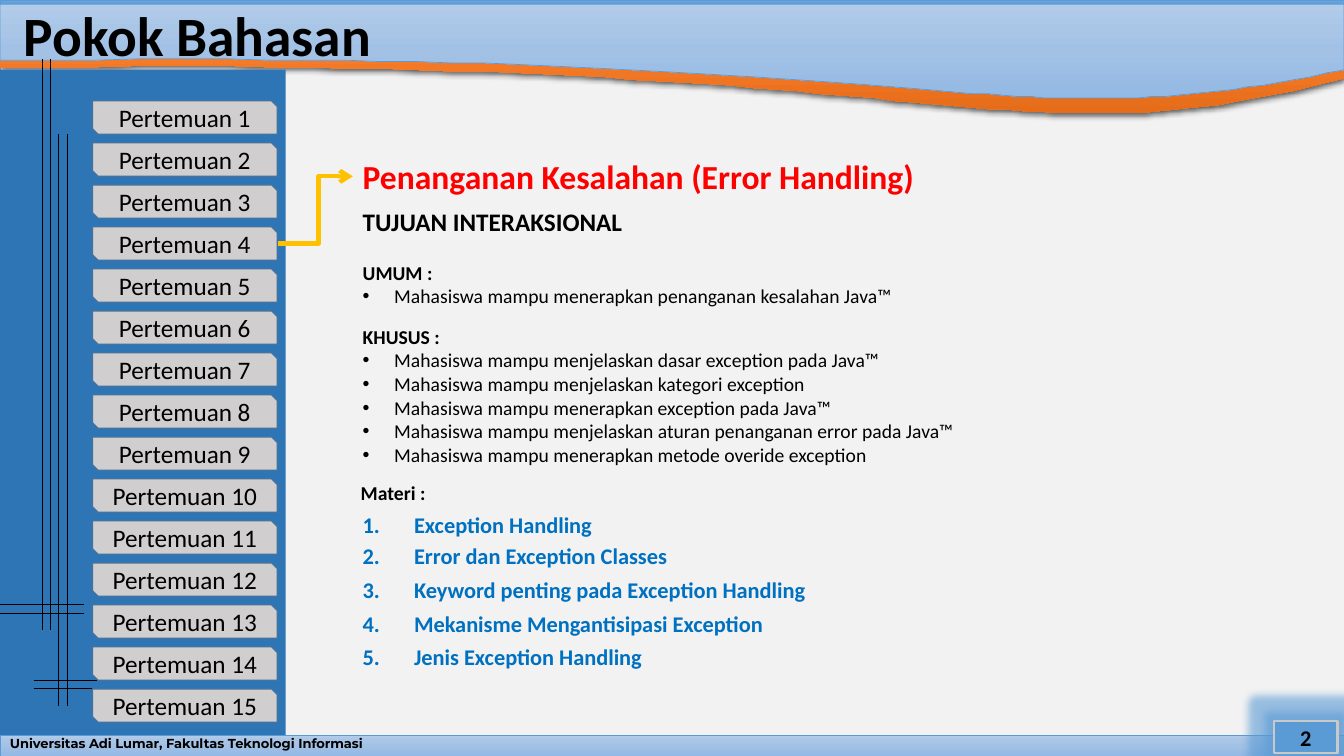
"""Build the course outline slide for meeting 4, error handling."""
from copy import deepcopy
from lxml import etree
from pptx import Presentation
from pptx import util as u
from pptx.dml.color import RGBColor
from pptx.enum import shapes, text
from pptx.oxml.ns import qn

COLORS = {
    "paper": "F2F2F2", "gray": "A5A5A5", "blue": "5B9BD5", "side": "2E75B6",
    "button": "D0CECE", "button_edge": "43739E", "silver": "C9C9C9",
    "black": "000000", "red": "FF0000", "link": "0070C0", "gold": "FFC000",
}
ORANGE = ["F18C57", "F67B28", "E56C19"]
SKY = ["B1CBE9", "A3C1E5", "93B9E4"]
DEEP = ["71A6DB", "559BDB", "448ACA"]
WIDTH, HEIGHT = 960, 540


def paint(shape, fill, edge=None, weight=0.5):
    """Fill a shape with a colour name or a list of three gradient stops."""
    shape.shadow.inherit = False
    if isinstance(fill, list):
        shape.fill.gradient()
        shape.fill.gradient_angle = 270
        stop_list = shape._element.spPr.find(".//" + qn("a:gsLst"))
        stop_list.insert(1, deepcopy(stop_list[0]))
        for stop, color, position in zip(shape.fill.gradient_stops, fill, (0, 0.5, 1)):
            stop.color.rgb = RGBColor.from_string(color)
            stop.position = position
    else:
        shape.fill.solid()
        shape.fill.fore_color.rgb = RGBColor.from_string(COLORS[fill])
    if edge:
        shape.line.color.rgb = RGBColor.from_string(COLORS[edge])
        shape.line.width = u.Pt(weight)
    else:
        shape.line.fill.background()
    return shape


def write(para, words, size, color="black", bold=True, font="Calibri"):
    """Put words into a paragraph and style it."""
    para.text = words
    para.font.size = u.Pt(size)
    para.font.bold = bold
    para.font.name = font
    para.font.color.rgb = RGBColor.from_string(COLORS[color])
    return para


deck = Presentation()
deck.slide_width, deck.slide_height = u.Pt(WIDTH), u.Pt(HEIGHT)
page = deck.slides.add_slide(deck.slide_layouts[6])
RECT = shapes.MSO_SHAPE.RECTANGLE

backdrop = page.shapes.add_shape(RECT, 0, u.Pt(3), u.Pt(WIDTH), u.Pt(537))
paint(backdrop, "paper", "gray")

waves = []
for top, left_y, pull_1, pull_2, right_y in [(0.7, 48.2, 38.2, 121, 56.2), (3, 43.2, 33.8, 103.7, 49.7)]:
    curve = []
    for step in range(61):
        t = step / 60
        weights = [(1 - t) ** 3, 3 * t * (1 - t) ** 2, 3 * t * t * (1 - t), t ** 3]
        x = sum(w * p for w, p in zip(weights, (0, 702.7, 709.9, WIDTH)))
        y = sum(w * p for w, p in zip(weights, (left_y, pull_1, pull_2, right_y)))
        curve.append((x, y))
    outline = page.shapes.build_freeform(WIDTH, top, scale=u.Pt(1))
    outline.add_line_segments([(0, top)] + curve, close=True)
    waves.append(outline.convert_to_shape())
orange_wave, sky_wave = waves
paint(orange_wave, ORANGE)
paint(sky_wave, SKY, "blue")
effects = orange_wave._element.spPr.find(qn("a:effectLst"))
shadow = etree.SubElement(effects, qn("a:outerShdw"), blurRad=str(u.Pt(4.5)),
                          dist=str(u.Pt(1.5)), dir="5400000", rotWithShape="0")
shade = etree.SubElement(shadow, qn("a:srgbClr"), val=COLORS["black"])
etree.SubElement(shade, qn("a:alpha"), val="63000")

top_bar = page.shapes.add_shape(RECT, 0, 0, u.Pt(WIDTH), u.Pt(7.9))
paint(top_bar, DEEP, "blue")
sky_wave._element.addprevious(top_bar._element)

footer = page.shapes.add_shape(RECT, 0, u.Pt(525), u.Pt(WIDTH), u.Pt(15))
paint(footer, SKY, "blue")
footer.text_frame.vertical_anchor = text.MSO_ANCHOR.MIDDLE
para = write(footer.text_frame.paragraphs[0], "Universitas Adi Lumar, Fakultas Teknologi Informasi",
             9.3, font="Montserrat")
para.alignment = text.PP_ALIGN.LEFT
para.line_spacing = 0.7

number = page.shapes.add_shape(RECT, u.Pt(910), u.Pt(515), u.Pt(45.4), u.Pt(23))
paint(number, "blue", "silver", 1.5)
number.text_frame.vertical_anchor = text.MSO_ANCHOR.MIDDLE
write(number.text_frame.paragraphs[0], "2", 16).alignment = text.PP_ALIGN.CENTER
effects = number._element.spPr.find(qn("a:effectLst"))
glow = etree.SubElement(effects, qn("a:glow"), rad=str(u.Pt(12)))
shade = etree.SubElement(glow, qn("a:srgbClr"), val=COLORS["blue"])
etree.SubElement(shade, qn("a:alpha"), val="60000")

title = page.shapes.add_textbox(u.Pt(10), u.Pt(5.8), u.Pt(914), u.Pt(44)).text_frame
title.word_wrap = True
title.vertical_anchor = text.MSO_ANCHOR.MIDDLE
write(title.paragraphs[0], "Pokok Bahasan", 39.6).line_spacing = 0.9

sidebar = page.shapes.add_shape(RECT, 0, u.Pt(49.7), u.Pt(204), u.Pt(475.3))
paint(sidebar, "side")

STRAIGHT, ELBOW = shapes.MSO_CONNECTOR.STRAIGHT, shapes.MSO_CONNECTOR.ELBOW
rules = [(x, y, x, y + 408) for x, y in [(30, 42), (36, 42), (42, 96), (48, 96)]]
rules += [(x, y, end, y) for x, y, end in [(24, 486, 108), (24, 492, 108), (0, 438, 60), (0, 432, 60)]]
links = [(STRAIGHT, ends, "black", 0.5) for ends in rules]
links.append((ELBOW, (198, 174, 252, 126), "gold", 3))
for kind, ends, color, weight in links:
    link = page.shapes.add_connector(kind, *[u.Pt(value) for value in ends])
    link.line.color.rgb = RGBColor.from_string(COLORS[color])
    link.line.width = u.Pt(weight)
    etree.SubElement(link._element.spPr, qn("a:effectLst"))
etree.SubElement(link.line._ln, qn("a:tailEnd"), type="arrow")
guides = link._element.spPr.find(".//" + qn("a:avLst"))
etree.SubElement(guides, qn("a:gd"), name="adj1", fmla="val 54700")

for index in range(15):
    button = page.shapes.add_shape(shapes.MSO_SHAPE.SNIP_2_DIAG_RECTANGLE,
                                   u.Pt(66), u.Pt(72 + 30 * index), u.Pt(132), u.Pt(24))
    paint(button, "button", "button_edge", 1)
    button.text_frame.vertical_anchor = text.MSO_ANCHOR.MIDDLE
    para = write(button.text_frame.paragraphs[0], f"Pertemuan {index + 1}", 18, bold=False)
    para.alignment = text.PP_ALIGN.CENTER

topics = ["Exception Handling", "Error dan Exception Classes", "Keyword penting pada Exception Handling",
          "Mekanisme Mengantisipasi Exception", "Jenis Exception Handling"]
labels = [(252, 108, 462, 36, "Penanganan Kesalahan (Error Handling)", 24, "red"),
          (250.6, 340, 61, 24.5, "Materi :", 14, "black")]
labels += [(252, 360 + 24 * index if index else 361.4, 462, 26.6, f"{index + 1}.\t{topic}", 16, "link")
           for index, topic in enumerate(topics)]
for left, top, width, height, words, size, color in labels:
    box = page.shapes.add_textbox(u.Pt(left), u.Pt(top), u.Pt(width), u.Pt(height))
    box.text_frame.word_wrap = color != "black"
    para = write(box.text_frame.paragraphs[0], words, size, color)
    if color == "link":
        props = para._p.get_or_add_pPr()
        props.set("marL", str(u.Pt(36.7)))
        props.set("indent", str(u.Pt(-36.7)))

goals = page.shapes.add_textbox(u.Pt(252), u.Pt(144), u.Pt(440.6), u.Pt(193.7)).text_frame
goals.word_wrap = False
write(goals.paragraphs[0], "TUJUAN INTERAKSIONAL", 18)
sections = [
    ("UMUM :", 17.1, ["Mahasiswa mampu menerapkan penanganan kesalahan Java™"]),
    ("KHUSUS :", 12.2, ["Mahasiswa mampu menjelaskan dasar exception pada Java™",
                        "Mahasiswa mampu menjelaskan kategori exception",
                        "Mahasiswa mampu menerapkan exception pada Java™",
                        "Mahasiswa mampu menjelaskan aturan penanganan error pada Java™",
                        "Mahasiswa mampu menerapkan metode overide exception"]),
]
for heading, gap, items in sections:
    write(goals.add_paragraph(), heading, 14).space_before = u.Pt(gap)
    for item in items:
        para = write(goals.add_paragraph(), item, 14, bold=False)
        props = para._p.get_or_add_pPr()
        props.set("marL", str(u.Pt(22.5)))
        props.set("indent", str(u.Pt(-22.5)))
        bullet_font = etree.Element(qn("a:buFont"), typeface="Arial")
        bullet = etree.Element(qn("a:buChar"), char="•")
        props.find(qn("a:defRPr")).addprevious(bullet_font)
        bullet_font.addnext(bullet)

deck.save("out.pptx")
